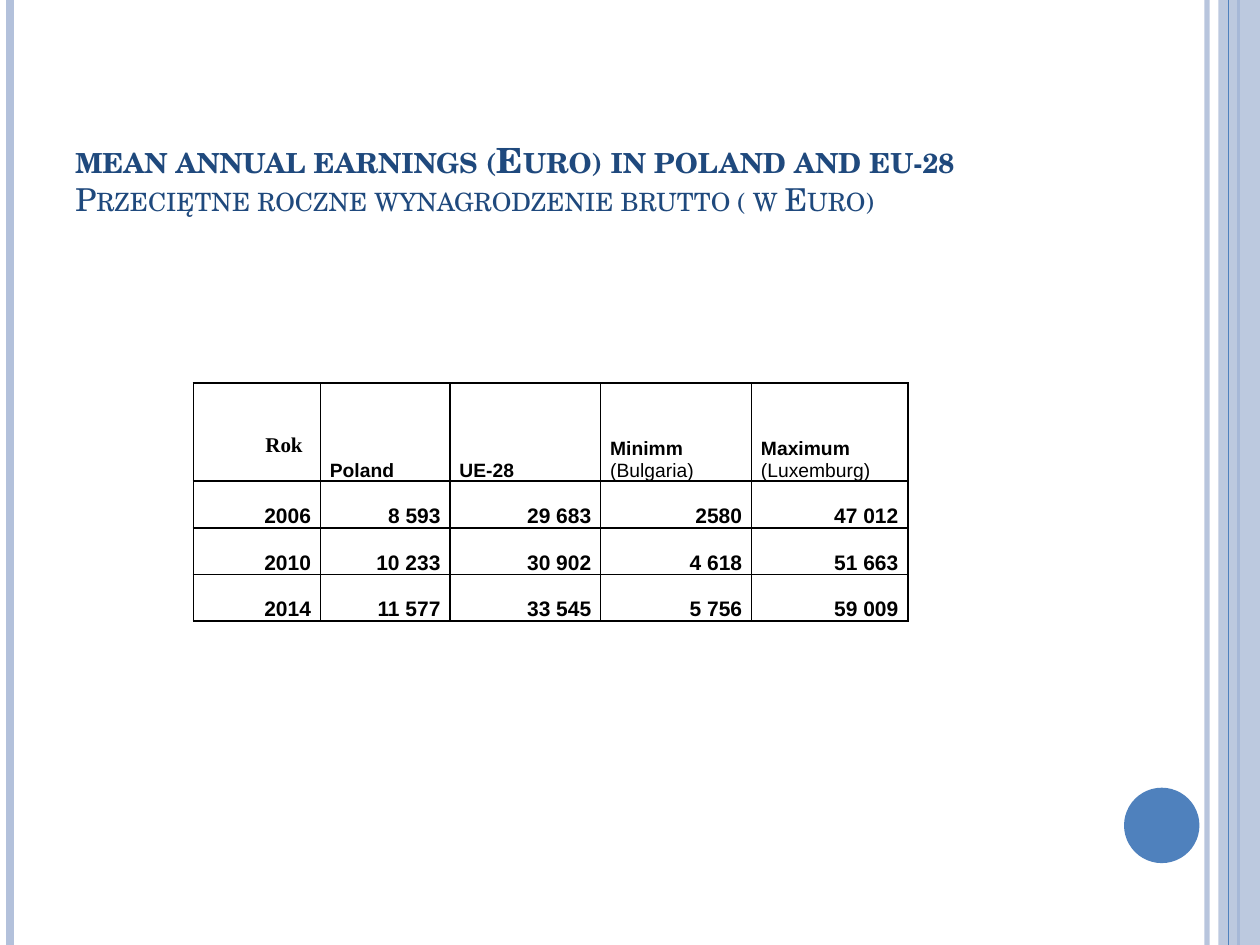
from dataclasses import dataclass

from lxml.etree import SubElement
from pptx import Presentation
from pptx.dml.color import RGBColor
from pptx.enum.shapes import MSO_CONNECTOR, MSO_SHAPE
from pptx.enum.text import MSO_ANCHOR as Anchor, PP_ALIGN as Align
from pptx.oxml.ns import qn
from pptx.util import Cm, Pt


@dataclass(frozen=True)
class Theme:
    pale: str = "B3C1DB"
    accent: str = "4F81BD"
    title: str = "1F497D"
    ink: str = "000000"
    title_font: str = "TeX Gyre Schola"
    year_font: str = "Times New Roman"
    table_font: str = "Arial"
    title_size: float = 19.8
    subtitle_size: float = 18
    head_size: float = 11
    value_size: float = 12
    border: float = 1


THEME = Theme()
WIDTH, HEIGHT = 25.4, 19.05

TITLE = [
    ("mean annual earnings (Euro) in poland and eu-28", THEME.title_size, True),
    ("Przeciętne roczne wynagrodzenie brutto ( w Euro)", THEME.subtitle_size, False),
]
YEAR_HEAD = "Rok"
# Each heading is a bold part and a regular part
HEADS = [("Poland", ""), ("UE-28", ""), ("Minimm ", "(Bulgaria)"), ("Maximum ", "(Luxemburg)")]
EARNINGS = [
    ("2006", "8 593", "29 683", "2580", "47 012"),
    ("2010", "10 233", "30 902", "4 618", "51 663"),
    ("2014", "11 577", "33 545", "5 756", "59 009"),
]
COLUMN_WIDTHS = [2.56, 2.61, 3.04, 3.04, 3.15]
HEAD_HEIGHT, ROW_HEIGHT = 1.98, 0.94

# x, colour, weight in points, opacity in percent
LINES_BEHIND = [(24.33, THEME.pale, 3, 93), (0.2, THEME.pale, 4.5, 100), (24.97, THEME.accent, 1.5, 100)]
LINES_IN_FRONT = [(24.77, THEME.accent, 0.75, 100)]


def set_opacity(fill_parent, percent):
    if percent < 100:
        color = next(fill_parent.iter(qn("a:srgbClr")))
        SubElement(color, qn("a:alpha"), val=str(percent * 1000))


def add_vertical_line(page, x, color, weight, opacity):
    line = page.shapes.add_connector(MSO_CONNECTOR.STRAIGHT, Cm(x), Cm(0), Cm(x), Cm(HEIGHT))
    line.line.color.rgb = RGBColor.from_string(color)
    line.line.width = Pt(weight)
    properties = line._element.spPr
    set_opacity(properties, opacity)
    SubElement(properties, qn("a:effectLst"))


def add_plain_shape(page, kind, left, top, width, height, color, opacity=100):
    shape = page.shapes.add_shape(kind, Cm(left), Cm(top), Cm(width), Cm(height))
    shape.shadow.inherit = False
    shape.fill.solid()
    shape.fill.fore_color.rgb = RGBColor.from_string(color)
    shape.line.fill.background()
    set_opacity(shape._element.spPr, opacity)


def add_span(para, text, font, size, color, bold):
    span = para.add_run()
    span.text = text
    span.font.name = font
    span.font.size = Pt(size)
    span.font.bold = bold
    span.font.color.rgb = RGBColor.from_string(color)
    return span


def add_title(page):
    box = page.shapes.add_textbox(Cm(1.27), Cm(2.13), Cm(20.75), Cm(2.39))
    frame = box.text_frame
    frame.word_wrap = True
    frame.vertical_anchor = Anchor.BOTTOM
    para = frame.paragraphs[0]
    for index, (text, size, bold) in enumerate(TITLE):
        if index:
            para.add_line_break()
        span = add_span(para, text, THEME.title_font, size, THEME.title, bold)
        span.font._element.set("cap", "small")


def style_cell(cell):
    """Give the cell black borders, no fill, narrow margins and bottom anchoring."""
    cell.margin_left = cell.margin_right = Cm(0.19)
    cell.margin_top = cell.margin_bottom = Cm(0)
    cell.vertical_anchor = Anchor.BOTTOM
    properties = cell._tc.get_or_add_tcPr()
    for side in ("lnL", "lnR", "lnT", "lnB"):
        border = SubElement(properties, qn(f"a:{side}"), w=str(Pt(THEME.border)))
        fill = SubElement(border, qn("a:solidFill"))
        SubElement(fill, qn("a:srgbClr"), val=THEME.ink)
    cell.fill.background()


def add_earnings_table(page):
    heights = [HEAD_HEIGHT] + [ROW_HEIGHT] * len(EARNINGS)
    frame = page.shapes.add_table(len(heights), len(COLUMN_WIDTHS), Cm(3.9), Cm(7.72),
                                  Cm(sum(COLUMN_WIDTHS)), Cm(sum(heights)))
    table = frame.table
    table.first_row = table.horz_banding = False
    for column, width in zip(table.columns, COLUMN_WIDTHS):
        column.width = Cm(width)
    for row, height in zip(table.rows, heights):
        row.height = Cm(height)
    for cell in table.iter_cells():
        style_cell(cell)

    year_cell = table.cell(0, 0)
    year_cell.vertical_anchor = Anchor.MIDDLE
    year_cell.margin_left, year_cell.margin_top = Cm(1.45), Cm(0.3)
    para = year_cell.text_frame.paragraphs[0]
    para.line_spacing = 1.5
    add_span(para, YEAR_HEAD, THEME.year_font, THEME.value_size, THEME.ink, True)

    for column, parts in enumerate(HEADS, start=1):
        para = table.cell(0, column).text_frame.paragraphs[0]
        for text, bold in zip(parts, (True, False)):
            if text:
                add_span(para, text, THEME.table_font, THEME.head_size, THEME.ink, bold)

    for row, values in enumerate(EARNINGS, start=1):
        for column, value in enumerate(values):
            para = table.cell(row, column).text_frame.paragraphs[0]
            para.alignment = Align.RIGHT
            para.line_spacing = 1.5
            add_span(para, value, THEME.table_font, THEME.value_size, THEME.ink, True)


def main():
    deck = Presentation()
    deck.slide_width, deck.slide_height = Cm(WIDTH), Cm(HEIGHT)
    page = deck.slides.add_slide(deck.slide_layouts[6])
    for line in LINES_BEHIND:
        add_vertical_line(page, *line)
    add_plain_shape(page, MSO_SHAPE.RECTANGLE, 24.56, 0, 0.84, HEIGHT, THEME.pale, 87)
    for line in LINES_IN_FRONT:
        add_vertical_line(page, *line)
    add_plain_shape(page, MSO_SHAPE.OVAL, 22.66, 15.88, 1.52, 1.52, THEME.accent)
    add_title(page)
    add_earnings_table(page)
    deck.save("out.pptx")


if __name__ == "__main__":
    main()
